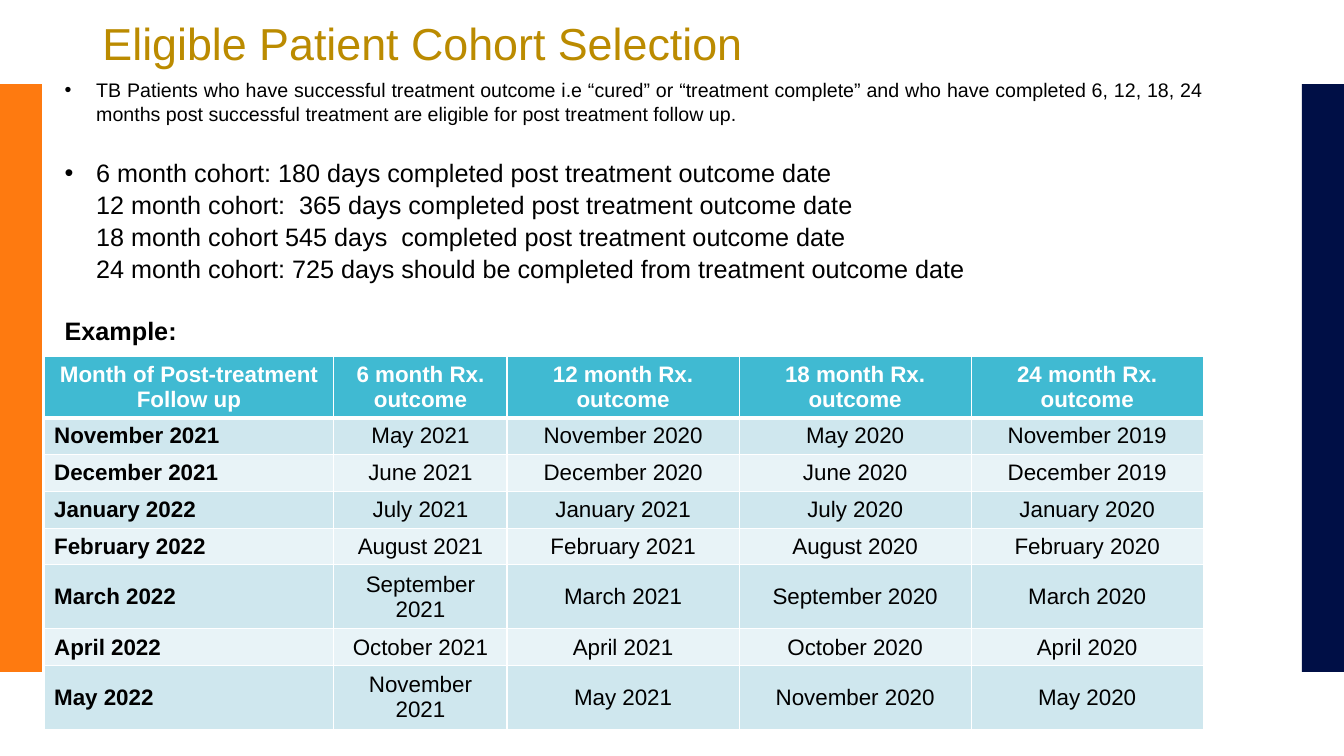
import pptx
import pptx.dml.color
import pptx.enum.shapes
import pptx.enum.text
import pptx.oxml.ns
import pptx.util
from lxml import etree

PX = 9525  # EMU in one px
COLORS = {
    "navy": "000F46", "orange": "FE7A10", "gold": "BB8B00", "teal": "40BAD2",
    "dark": "CFE7EE", "pale": "E8F3F7", "black": "000000", "white": "FFFFFF",
}
ALIGN = pptx.enum.text.PP_ALIGN
MIDDLE = pptx.enum.text.MSO_ANCHOR.MIDDLE
TOP = pptx.enum.text.MSO_ANCHOR.TOP
qn = pptx.oxml.ns.qn

HEADS = ["Month of Post-treatment Follow up"] + [
    f"{count} month Rx. outcome" for count in (6, 12, 18, 24)]
MONTHS = ["January", "February", "March", "April", "May", "June", "July",
          "August", "September", "October", "November", "December"]
COHORTS = "\v".join([
    "6 month cohort: 180 days completed post treatment outcome date",
    "12 month cohort:  365 days completed post treatment outcome date",
    "18 month cohort 545 days  completed post treatment outcome date",
    "24 month cohort: 725 days should be completed from treatment outcome date",
])
INTRO = ("TB Patients who have successful treatment outcome i.e “cured” or "
         "“treatment complete” and who have completed 6, 12, 18, 24 months "
         "post successful treatment are eligible for post treatment follow up.")


def emu(px):
    return pptx.util.Emu(px * PX)


def color(name):
    return pptx.dml.color.RGBColor.from_string(COLORS[name])


def month(index):
    """Name a month counted from January of year 0."""
    year, place = divmod(index, 12)
    return f"{MONTHS[place]} {year}"


def write(para, text, size=16, bold=False, ink="black", align=ALIGN.LEFT,
          before=0, lines=1.0):
    para.text = text
    para.alignment = align
    para.space_before = pptx.util.Pt(before)
    para.line_spacing = lines
    for run in para.runs:
        run.font.name = "Arial"
        run.font.size = pptx.util.Pt(size)
        run.font.bold = bold
        run.font.color.rgb = color(ink)
    for gap in para._p.findall(qn("a:br")):
        etree.SubElement(gap, qn("a:rPr")).set("sz", str(size * 100))


def mark(para, dot, indent):
    """Set the bullet, or none, and the hanging indent in px."""
    props = para._p.get_or_add_pPr()
    props.set("marL", str(indent * PX))
    props.set("indent", str(-indent * PX))
    if not dot:
        etree.SubElement(props, qn("a:buNone"))
        return
    tint = etree.SubElement(props, qn("a:buClr"))
    etree.SubElement(tint, qn("a:srgbClr")).set("val", COLORS["black"])
    etree.SubElement(props, qn("a:buFont")).set("typeface", "Arial")
    etree.SubElement(props, qn("a:buChar")).set("char", dot)


def border(cell, **widths):
    """Draw white cell edges, in points."""
    props = cell._tc.get_or_add_tcPr()
    for side, width in widths.items():
        line = etree.SubElement(props, qn(f"a:ln{side}"))
        line.set("w", str(width * 12700))
        fill = etree.SubElement(line, qn("a:solidFill"))
        etree.SubElement(fill, qn("a:srgbClr")).set("val", COLORS["white"])


class Deck:
    def __init__(self):
        self.show = pptx.Presentation()
        self.show.slide_width = emu(1280)
        self.show.slide_height = emu(720)
        self.slide = self.show.slides.add_slide(self.show.slide_layouts[1])

    def bar(self, left, fill):
        shape = self.slide.shapes.add_shape(
            pptx.enum.shapes.MSO_SHAPE.RECTANGLE,
            emu(left), emu(80), emu(40), emu(560))
        shape.shadow.inherit = False
        shape.fill.solid()
        shape.fill.fore_color.rgb = color(fill)
        shape.line.fill.background()

    def place(self, shape, box, anchor):
        shape.left, shape.top, shape.width, shape.height = map(emu, box)
        frame = shape.text_frame
        frame.word_wrap = True
        frame.auto_size = pptx.enum.text.MSO_AUTO_SIZE.NONE
        frame.vertical_anchor = anchor
        return frame

    def title(self, text, box):
        frame = self.place(self.slide.shapes.title, box, MIDDLE)
        write(frame.paragraphs[0], text, size=32, ink="gold")

    def body(self, items, box):
        frame = self.place(self.slide.placeholders[1], box, TOP)
        for index, (text, dot, style) in enumerate(items):
            para = frame.add_paragraph() if index else frame.paragraphs[0]
            write(para, text, lines=1.05, **style)
            mark(para, dot, 30 if dot else 0)

    def table(self, rows, box, widths, heights):
        grid = self.slide.shapes.add_table(
            len(rows), len(widths), *map(emu, box)).table
        for col, width in zip(grid.columns, widths):
            col.width = emu(width)
        for row, height in zip(grid.rows, heights):
            row.height = emu(height)
        for y, texts in enumerate(rows):
            for x, text in enumerate(texts):
                self.cell(grid.cell(y, x), text, y, x)

    def cell(self, cell, text, y, x):
        head = y == 0
        cell.vertical_anchor = MIDDLE
        border(cell, L=1, R=1, T=3 if y == 1 else 1, B=3 if head else 1)
        cell.fill.solid()
        cell.fill.fore_color.rgb = color(
            "teal" if head else "dark" if y % 2 else "pale")
        write(cell.text_frame.paragraphs[0], text, bold=head or x == 0,
              ink="white" if head else "black",
              align=ALIGN.CENTER if head or x else ALIGN.LEFT)


def main():
    deck = Deck()

    # Side bars
    deck.bar(1240, "navy")
    deck.bar(0, "orange")

    # Title and cohort rules
    deck.title("Eligible Patient Cohort Selection", (88, 12, 1104, 57))
    deck.body([
        (INTRO, "•", dict(size=14, align=ALIGN.JUSTIFY)),
        (COHORTS, "•", dict(size=18, before=21.7)),
        ("Example:", None, dict(size=18, bold=True, before=21.7)),
    ], (52, 68, 1104, 272))

    # Follow-up months, each with the outcome months 6 to 24 months earlier
    start = 2021 * 12 + MONTHS.index("November")
    rows = [HEADS] + [[month(start + step - back) for back in (0, 6, 12, 18, 24)]
                      for step in range(7)]
    deck.table(rows, (42, 339, 1104, 358), [276, 165, 221, 221, 221],
               [59, 35, 35, 35, 35, 61, 35, 61])

    deck.show.save("out.pptx")


if __name__ == "__main__":
    main()
